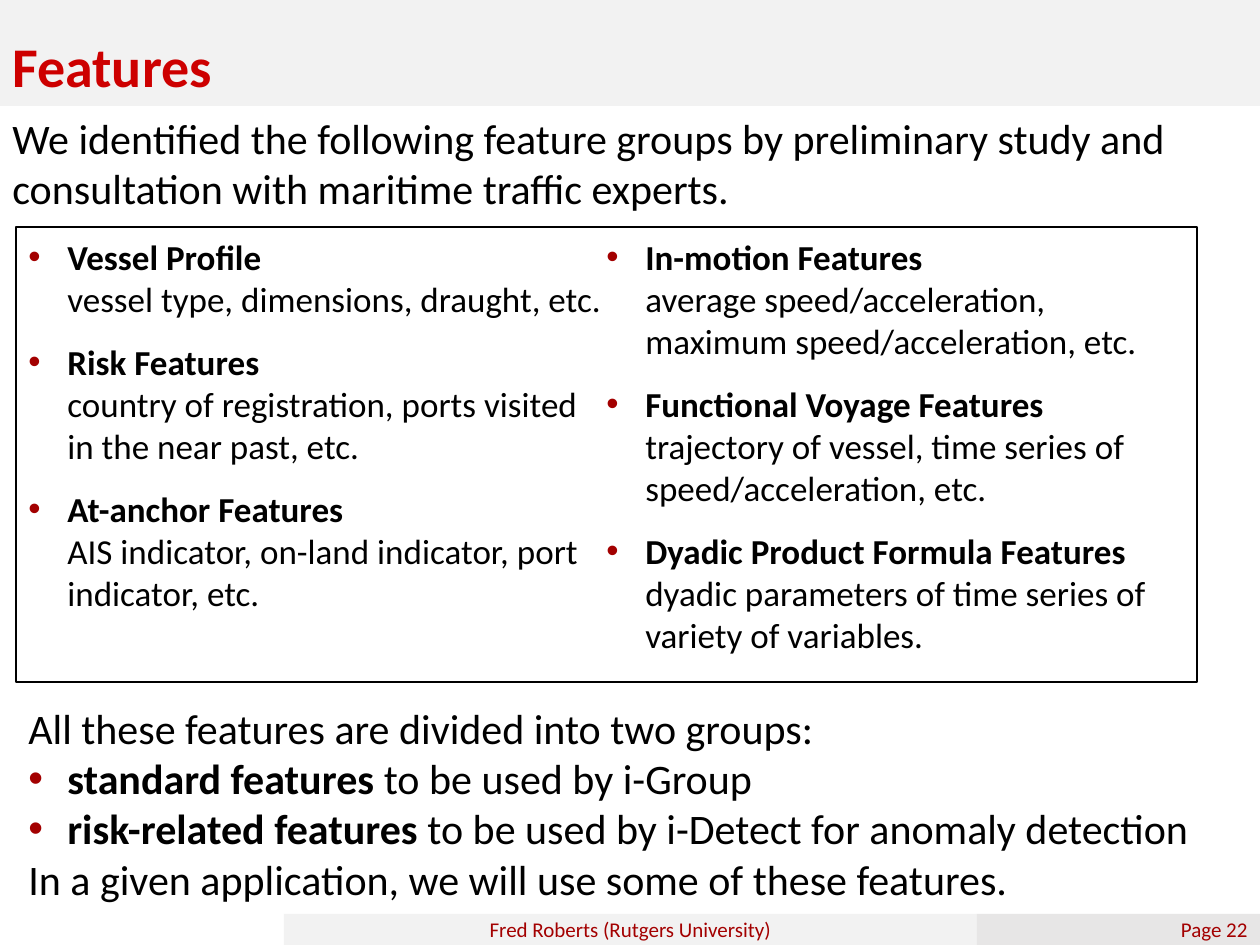
from lxml import etree
from pptx import Presentation
from pptx.dml.color import RGBColor
from pptx.enum.shapes import MSO_SHAPE as SHAPE
from pptx.enum.text import MSO_ANCHOR as ANCHOR, PP_ALIGN as ALIGN
from pptx.oxml.ns import qn
from pptx.util import Emu, Pt

EMU_PER_PX = 914400 / 126
FONT = "Calibri"
BLACK, TITLE_RED, DARK_RED = "000000", "CD0000", "A30000"
PALE_GREY, MID_GREY = "F2F2F2", "E7E6E6"
BULLET_INDENT = 39


def px(length):
    return Emu(round(length * EMU_PER_PX))


def color(hex_code):
    return RGBColor.from_string(hex_code)


def add_run(paragraph, text, size=24, ink=BLACK, bold=False):
    run = paragraph.add_run()
    run.text = text
    run.font.name = FONT
    run.font.size = Pt(size)
    run.font.bold = bold
    run.font.color.rgb = color(ink)


def add_bullet(paragraph):
    """Give the paragraph a red bullet with a hanging indent."""
    props = paragraph._p.get_or_add_pPr()
    props.set("marL", str(px(BULLET_INDENT)))
    props.set("indent", str(-px(BULLET_INDENT)))
    bullet_color = etree.SubElement(props, qn("a:buClr"))
    etree.SubElement(bullet_color, qn("a:srgbClr"), val=DARK_RED)
    etree.SubElement(props, qn("a:buFont"), typeface="Arial")
    etree.SubElement(props, qn("a:buChar"), char="•")


class SlideBuilder:
    def __init__(self, slide):
        self.shapes = slide.shapes

    def rectangle(self, box, fill=None, line=None):
        shape = self.shapes.add_shape(SHAPE.RECTANGLE, *map(px, box))
        shape.shadow.inherit = False
        if fill:
            shape.fill.solid()
            shape.fill.fore_color.rgb = color(fill)
        else:
            shape.fill.background()
        if line:
            shape.line.color.rgb = color(line)
            shape.line.width = Pt(0.75)
        else:
            shape.line.fill.background()
        return shape

    def band(self, box, fill, text, align, anchor=ANCHOR.MIDDLE, spacing=1.0, **style):
        """Draw a filled strip with one line of text."""
        frame = self.rectangle(box, fill).text_frame
        frame.word_wrap = True
        frame.vertical_anchor = anchor
        label = frame.paragraphs[0]
        label.alignment = align
        label.line_spacing = spacing
        add_run(label, text, **style)

    def text_box(self, box):
        frame = self.shapes.add_textbox(*map(px, box)).text_frame
        frame.word_wrap = True
        return frame

    def feature_column(self, box, features):
        frame = self.text_box(box)
        for index, (heading, examples) in enumerate(features):
            item = frame.add_paragraph() if index else frame.paragraphs[0]
            if index:
                item.space_before = Pt(12)
            add_bullet(item)
            add_run(item, heading, size=20, bold=True)
            item.add_line_break()
            add_run(item, examples, size=20)

    def statements(self, box, lines):
        """Write plain lines, with a bullet on those that have a bold term."""
        frame = self.text_box(box)
        for index, (term, text) in enumerate(lines):
            line = frame.add_paragraph() if index else frame.paragraphs[0]
            if term:
                add_bullet(line)
                add_run(line, term, bold=True)
            add_run(line, text)


def main():
    presentation = Presentation()
    presentation.slide_width, presentation.slide_height = px(1260), px(945)
    builder = SlideBuilder(presentation.slides.add_slide(presentation.slide_layouts[6]))

    builder.band((0, 0, 1260, 106), PALE_GREY, "Features", ALIGN.LEFT,
                 anchor=ANCHOR.BOTTOM, spacing=0.9, size=32, ink=TITLE_RED, bold=True)
    builder.statements((0, 106, 1260, 130), [
        ("", "We identified the following feature groups by preliminary study and "
             "consultation with maritime traffic experts."),
    ])

    footers = [
        (284, 693, PALE_GREY, "Fred Roberts (Rutgers University)", ALIGN.CENTER),
        (977, 283, MID_GREY, "Page 22", ALIGN.RIGHT),
    ]
    for left, width, fill, text, align in footers:
        builder.band((left, 914, width, 31), fill, text, align, size=12, ink=DARK_RED)

    builder.rectangle((16, 227, 1181, 455), line=BLACK)
    feature_columns = [
        [("Vessel Profile", "vessel type, dimensions, draught, etc."),
         ("Risk Features", "country of registration, ports visited in the near past, etc."),
         ("At-anchor Features", "AIS indicator, on-land indicator, port indicator, etc.")],
        [("In-motion Features",
          "average speed/acceleration, maximum speed/acceleration, etc."),
         ("Functional Voyage Features",
          "trajectory of vessel, time series of speed/acceleration, etc."),
         ("Dyadic Product Formula Features",
          "dyadic parameters of time series of variety of variables.")],
    ]
    for column, features in enumerate(feature_columns):
        builder.feature_column((16 + 578 * column, 229, 603, 453), features)

    builder.statements((16, 696, 1196, 217), [
        ("", "All these features are divided into two groups:"),
        ("standard features ", "to be used by i-Group"),
        ("risk-related features ", "to be used by i-Detect for anomaly detection"),
        ("", "In a given application, we will use some of these features."),
    ])

    presentation.save("out.pptx")


if __name__ == "__main__":
    main()
